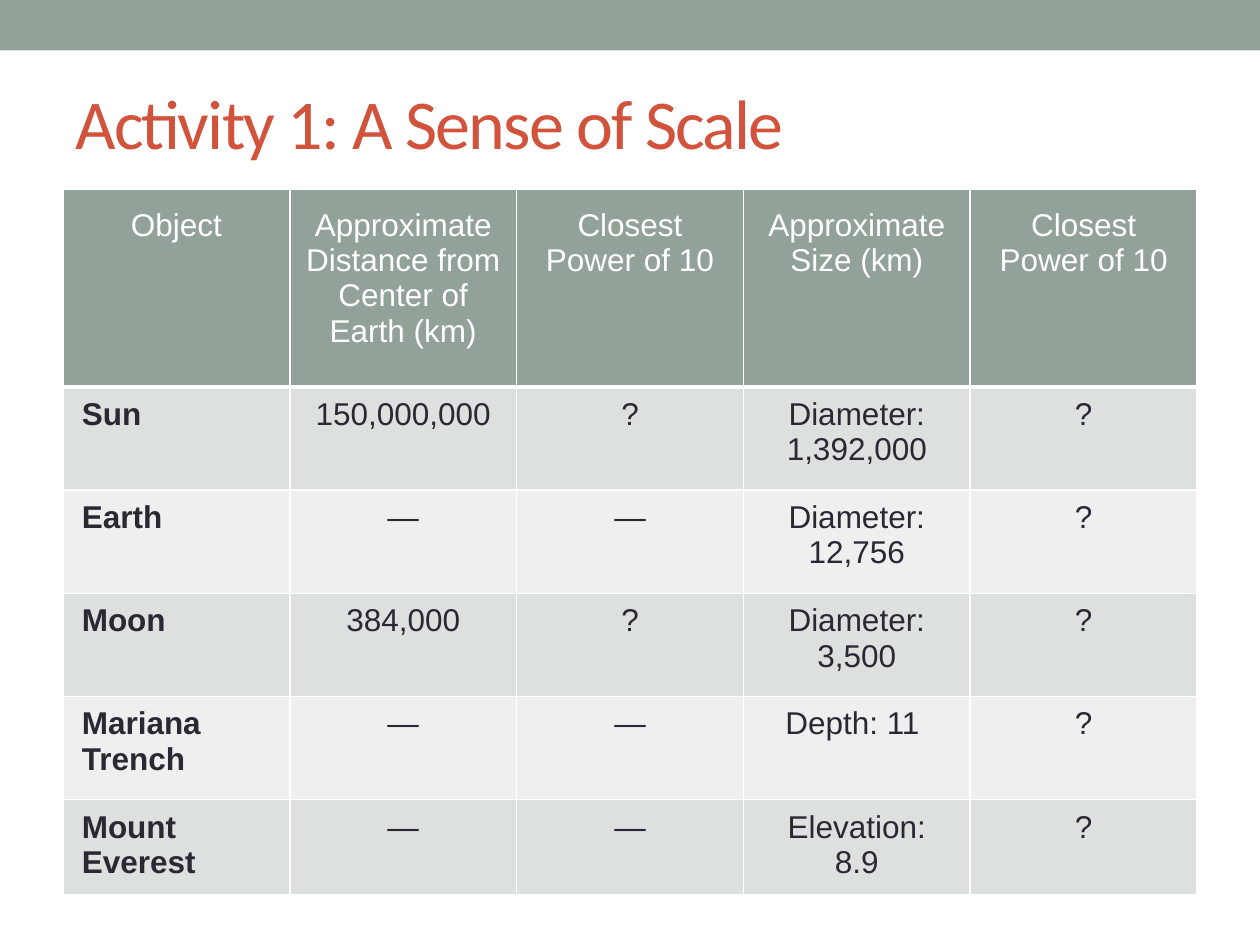
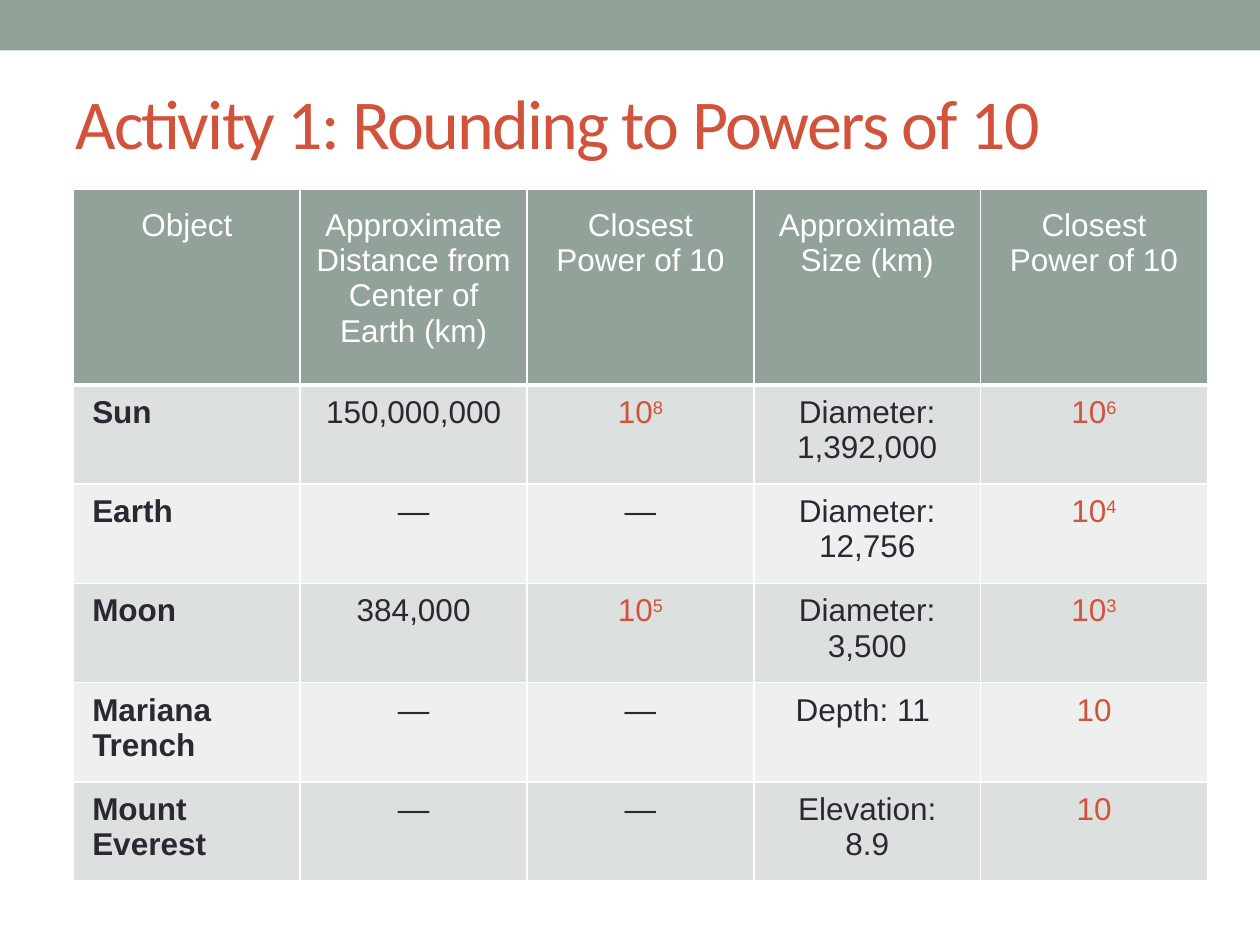
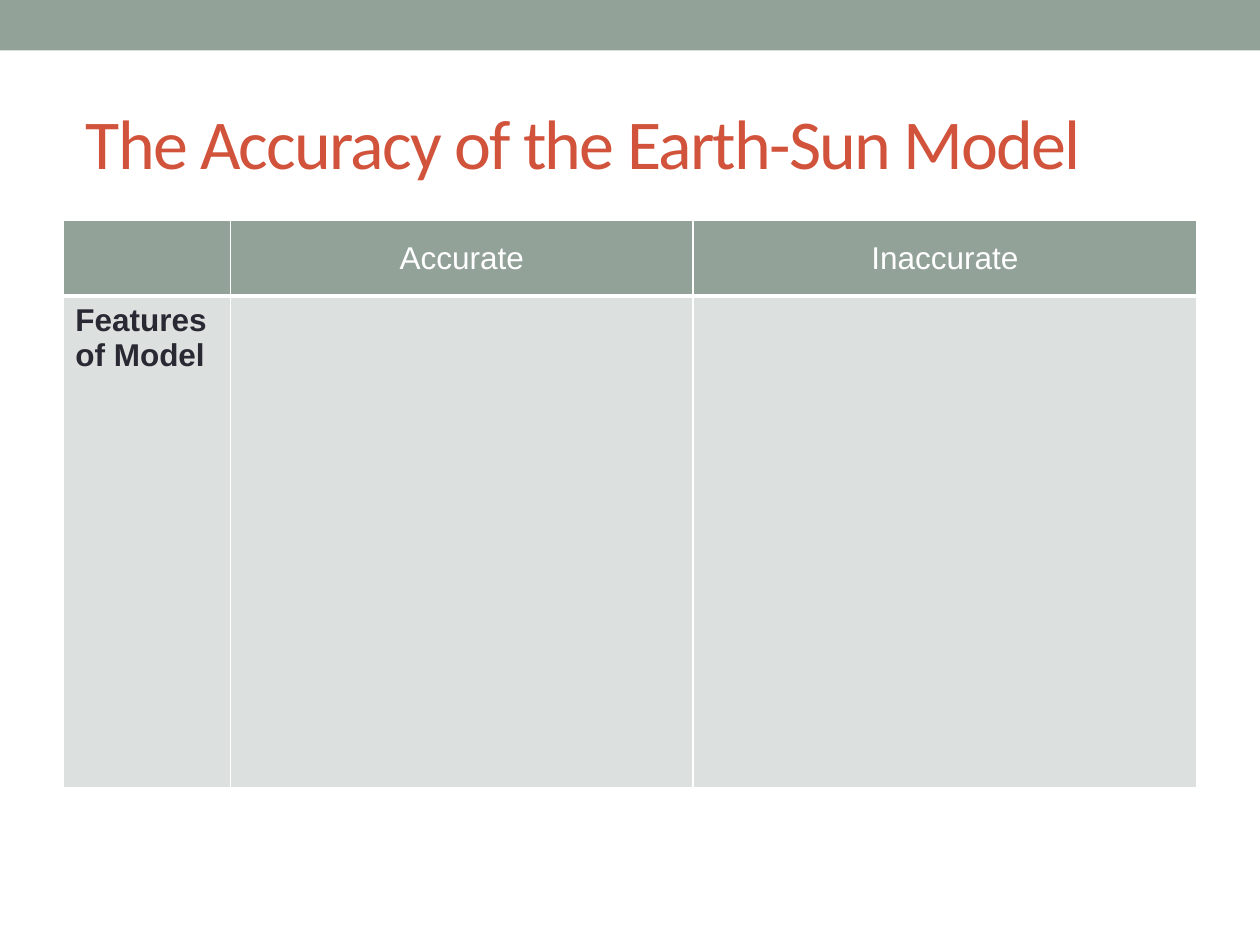
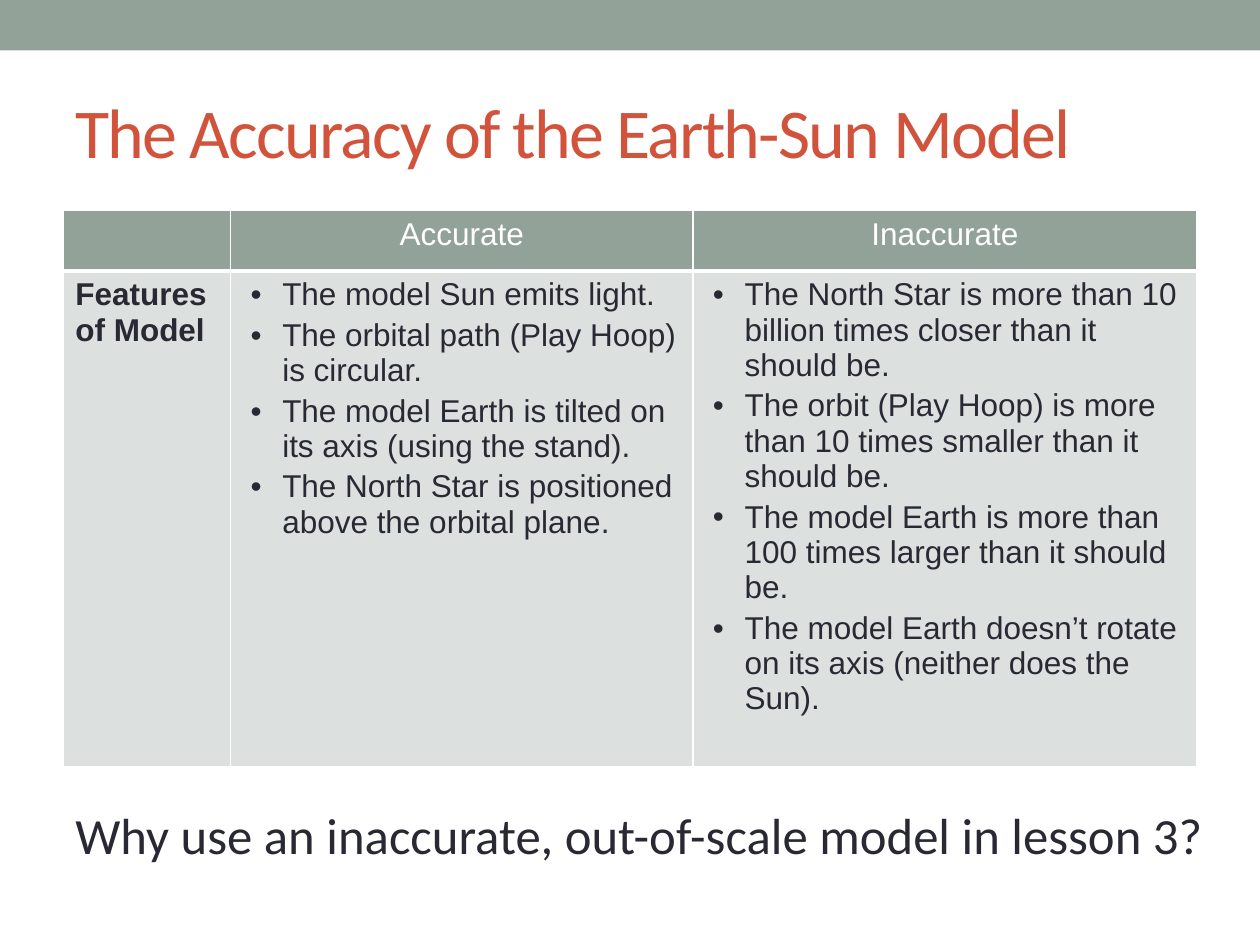
import pptx
import pptx.util
import pptx.dml.color
import pptx.enum.shapes
import pptx.enum.text
from lxml import etree
from pptx.oxml.ns import qn

Cm = pptx.util.Cm
Pt = pptx.util.Pt
ALIGN = pptx.enum.text.PP_ALIGN
ANCHOR = pptx.enum.text.MSO_ANCHOR

HUES = {
    "sage": "93A299",
    "rust": "D2533C",
    "ink": "292934",
    "white": "FFFFFF",
    "dark": "DCE0DE",
    "pale": "EEF0EF",
}
WIDE, HIGH = 25.4, 19.05
EDGE = 1.27
SPAN = WIDE - 2 * EDGE
HEAD_PAD = (0.25, 0.38)
BODY_PAD = (0.38, 0.2)
SLIM_PAD = (0.25, 0.13)

LABELS = [
    "Object",
    "Approximate Distance from Center of Earth (km)",
    "Closest Power of 10",
    "Approximate Size (km)",
    "Closest Power of 10",
]
BODIES = [
    ("Sun", "150,000,000", "Diameter: 1,392,000"),
    ("Earth", "—", "Diameter: 12,756"),
    ("Moon", "384,000", "Diameter: 3,500"),
    ("Mariana Trench", "—", "Depth: 11 "),
    ("Mount Everest", "—", "Elevation: 8.9"),
]
ASKED = [("?", "?"), ("—", "?"), ("?", "?"), ("—", "?"), ("—", "?")]
POWERS = [("10^8", "10^6"), ("—", "10^4"), ("10^5", "10^3"), ("—", "10"), ("—", "10")]

MODEL = "The Accuracy of the Earth-Sun Model"
SIDES = ["", "Accurate", "Inaccurate"]
FEATURE = "Features of Model"
RIGHT = [
    "The model Sun emits light.",
    "The orbital path (Play Hoop) is circular.",
    "The model Earth is tilted on its axis (using the stand).",
    "The North Star is positioned above the orbital plane.",
]
WRONG = [
    "The North Star is more than 10 billion times closer than it should be.",
    "The orbit (Play Hoop) is more than 10 times smaller than it should be.",
    "The model Earth is more than 100 times larger than it should be.",
    "The model Earth doesn’t rotate on its axis (neither does the Sun).",
]


def color(name):
    return pptx.dml.color.RGBColor.from_string(HUES[name])


def style(run, size, face, hue, bold=False):
    run.font.size = Pt(size)
    run.font.name = face
    run.font.bold = bold
    run.font.color.rgb = color(hue)


def add_text(slide, text, place, size, hue, anchor=ANCHOR.TOP):
    frame = slide.shapes.add_textbox(*map(Cm, place)).text_frame
    frame.word_wrap = True
    frame.vertical_anchor = anchor
    frame.text = text
    run = frame.paragraphs[0].runs[0]
    style(run, size, "Calibri", hue)
    return run


def add_slide(deck, title, left=EDGE, top=EDGE):
    slide = deck.slides.add_slide(deck.slide_layouts[6])
    band = slide.shapes.add_shape(
        pptx.enum.shapes.MSO_SHAPE.RECTANGLE, 0, 0, Cm(WIDE), Cm(1.02))
    band.shadow.inherit = False
    band.fill.solid()
    band.fill.fore_color.rgb = color("sage")
    band.line.fill.background()
    place = (left, top, WIDE - EDGE - left, 2.74)
    run = add_text(slide, title, place, 40, "rust", ANCHOR.MIDDLE)
    run._r.get_or_add_rPr().set("spc", "-100")
    return slide


def add_edges(cell, base):
    props = cell._tc.get_or_add_tcPr()
    for spot, side in enumerate("LRTB"):
        line = etree.Element(qn(f"a:ln{side}"))
        line.set("w", str(Pt(base if side == "B" else 1)))
        fill = etree.SubElement(line, qn("a:solidFill"))
        etree.SubElement(fill, qn("a:srgbClr")).set("val", HUES["white"])
        props.insert(spot, line)


def paint(cell, fill, pad, base=1):
    cell.fill.solid()
    cell.fill.fore_color.rgb = color(fill)
    cell.margin_left = cell.margin_right = Cm(pad[0])
    cell.margin_top = cell.margin_bottom = Cm(pad[1])
    add_edges(cell, base)


def write(cell, text, hue="ink", bold=False, align=ALIGN.CENTER):
    stem, _, power = text.partition("^")
    para = cell.text_frame.paragraphs[0]
    para.text = stem
    para.alignment = align
    if power:
        run = para.add_run()
        run.text = power
        run._r.get_or_add_rPr().set("baseline", "30000")
    for run in para.runs:
        style(run, 18, "Arial", hue, bold)


def add_points(cell, points):
    cell.text_frame.text = "\n".join(points)
    for spot, para in enumerate(cell.text_frame.paragraphs):
        props = para._p.get_or_add_pPr()
        props.set("marL", str(Cm(0.79)))
        props.set("indent", str(Cm(-0.64)))
        etree.SubElement(props, qn("a:buFont")).set("typeface", "Arial")
        etree.SubElement(props, qn("a:buChar")).set("char", "•")
        if spot:
            para.space_before = Pt(3)
        style(para.runs[0], 18, "Arial", "ink")


def add_grid(slide, left, top, cols, rows, heads, pads):
    frame = slide.shapes.add_table(
        len(rows), len(cols), Cm(left), Cm(top), Cm(sum(cols)), Cm(sum(rows)))
    table = frame.table
    for col, width in zip(table.columns, cols):
        col.width = Cm(width)
    for row, height in zip(table.rows, rows):
        row.height = Cm(height)
    for cell, head in zip(table.rows[0].cells, heads):
        paint(cell, "sage", pads[0], 3)
        if head:
            write(cell, head, "white")
    for spot in range(1, len(rows)):
        for cell in table.rows[spot].cells:
            paint(cell, "dark" if spot % 2 else "pale", pads[1])
    return table


def add_scale(slide, left, rows, answers):
    table = add_grid(slide, left, 3.81, [SPAN / 5] * 5, rows, LABELS,
                     (HEAD_PAD, BODY_PAD))
    for spot, (body, answer) in enumerate(zip(BODIES, answers), 1):
        name, far, size = body
        cells = table.rows[spot].cells
        write(cells[0], name, bold=True, align=ALIGN.LEFT)
        for col, text in enumerate((far, answer[0], size, answer[1]), 1):
            hue = "rust" if text.startswith("10") else "ink"
            write(cells[col], text, hue)


def add_model(slide, top, rows):
    table = add_grid(slide, EDGE, top, [3.38, 9.32, 10.16], rows, SIDES,
                     (SLIM_PAD, SLIM_PAD))
    write(table.cell(1, 0), FEATURE, bold=True, align=ALIGN.LEFT)
    return table


def main():
    deck = pptx.Presentation()
    deck.slide_width, deck.slide_height = Cm(WIDE), Cm(HIGH)

    slide = add_slide(deck, "Activity 1: A Sense of Scale", top=1.07)
    add_scale(slide, EDGE, [3.99] + [2.08] * 4 + [1.85], ASKED)

    slide = add_slide(deck, "Activity 1: Rounding to Powers of 10", top=1.07)
    add_scale(slide, 1.48, [3.95] + [2] * 5, POWERS)

    slide = add_slide(deck, MODEL, 1.48, 1.48)
    table = add_model(slide, 4.45, [1.52, 9.91])
    for cell in table.rows[0].cells:
        cell.vertical_anchor = ANCHOR.MIDDLE

    slide = add_slide(deck, MODEL)
    table = add_model(slide, 4.24, [1.22, 10])
    add_points(table.cell(1, 1), RIGHT)
    add_points(table.cell(1, 2), WRONG)
    add_text(slide, "Why use an inaccurate, out-of-scale model in lesson 3?",
             (EDGE, 16.08, 23.5, 1.5), 29, "ink")

    deck.save("out.pptx")


if __name__ == "__main__":
    main()
